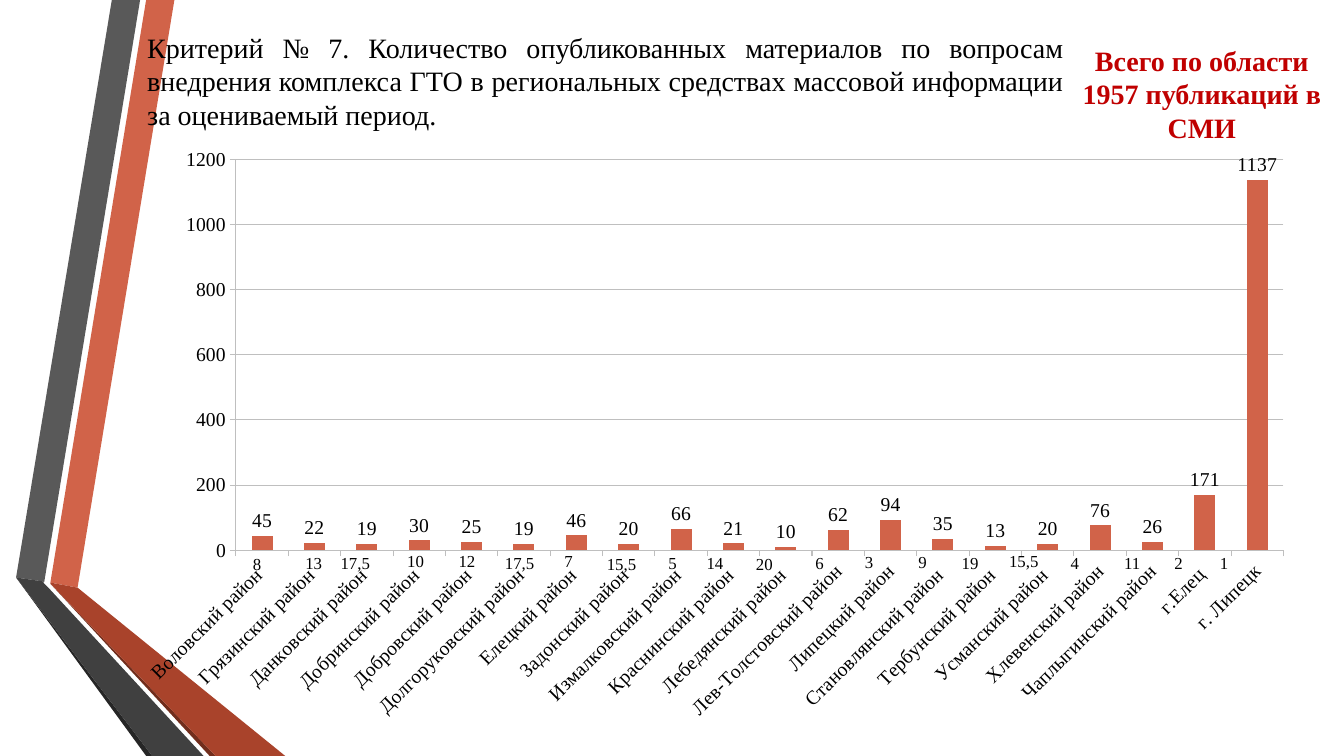
from typing import NamedTuple

from lxml.etree import SubElement
from pptx import Presentation
from pptx.chart.data import CategoryChartData
from pptx.dml.color import RGBColor
from pptx.enum.chart import XL_CHART_TYPE as ChartType
from pptx.enum.chart import XL_LABEL_POSITION as LabelPosition
from pptx.enum.chart import XL_TICK_MARK as TickMark
from pptx.enum.text import MSO_ANCHOR as Anchor
from pptx.enum.text import MSO_AUTO_SIZE as AutoSize
from pptx.enum.text import PP_ALIGN as Align
from pptx.oxml.ns import qn
from pptx.util import Inches, Pt


class Theme(NamedTuple):
    font: str = "Times New Roman"
    text: str = "000000"
    total: str = "C00000"
    bar: str = "D16349"
    grid: str = "BFBFBF"
    heading_size: int = 20
    chart_size: int = 14
    rank_size: int = 12


class Frame(NamedTuple):
    left: float
    top: float
    width: float
    height: float


class Ribbon(NamedTuple):
    color: str
    points: list[tuple[float, float]]


class District(NamedTuple):
    name: str
    publications: int
    rank: str
    rank_left: float
    rank_top: float
    rank_width: float


THEME = Theme()
CHART = Frame(1.21, 1.36, 11.75, 5.9)
PLOT = Frame(2.34, 1.58, 10.39, 3.88)

RIBBONS = [
    Ribbon(THEME.bar, [(0.5, 5.78), (0.77, 5.83), (1.73, 0), (1.45, 0)]),
    Ribbon("595959", [(1.39, 0), (1.11, 0), (0.16, 5.73), (0.44, 5.77)]),
    Ribbon("262626", [(0.16, 5.73), (1.45, 7.5), (1.51, 7.5)]),
    Ribbon("712D1C", [(0.5, 5.79), (2.08, 7.5), (2.14, 7.5)]),
    Ribbon("A9432B", [(0.5, 5.79), (2.14, 7.5), (2.83, 7.5), (0.77, 5.83), (0.5, 5.78)]),
    Ribbon("404040", [(2.02, 7.5), (0.48, 5.83), (0.43, 5.78), (0.44, 5.77),
                      (0.16, 5.73), (1.51, 7.5)]),
]

DISTRICTS = [
    District("Воловский район ", 45, "8", 2.41, 5.44, 0.6),
    District("Грязинский район ", 22, "13", 2.93, 5.43, 0.58),
    District("Данковский район ", 19, "17,5", 3.28, 5.43, 0.66),
    District("Добринский район ", 30, "10", 3.94, 5.41, 0.63),
    District("Добровский район ", 25, "12", 4.45, 5.41, 0.6),
    District("Долгоруковский район ", 19, "17,5", 4.91, 5.43, 0.53),
    District("Елецкий район ", 46, "7", 5.5, 5.41, 0.56),
    District("Задонский район ", 20, "15,5", 5.92, 5.44, 0.52),
    District("Измалковский район ", 66, "5", 6.53, 5.43, 0.45),
    District("Краснинский район ", 21, "14", 6.91, 5.43, 0.68),
    District("Лебедянский район ", 10, "20", 7.4, 5.44, 0.73),
    District("Лев-Толстовский район", 62, "6", 7.99, 5.43, 0.54),
    District("Липецкий район", 94, "3", 8.48, 5.42, 0.41),
    District("Становлянский район ", 35, "9", 9.01, 5.42, 0.34),
    District("Тербунский район ", 13, "19", 9.44, 5.43, 0.43),
    District("Усманский район ", 20, "15,5", 9.91, 5.41, 0.57),
    District("Хлевенский район", 76, "4", 10.52, 5.43, 0.42),
    District("Чаплыгинский район", 26, "11", 11.05, 5.43, 0.78),
    District("г.Елец ", 171, "2", 11.55, 5.43, 0.45),
    District("г. Липецк", 1137, "1", 12, 5.43, 0.45),
]


def style_font(font, size: int, color: str = THEME.text, bold: bool = False) -> None:
    font.name = THEME.font
    font.size = Pt(size)
    font.bold = bold
    font.color.rgb = RGBColor.from_string(color)


def write(box, text: str, size: int, align: Align, color: str = THEME.text,
          bold: bool = False, auto_size: AutoSize = AutoSize.NONE) -> None:
    frame = box.text_frame
    frame.word_wrap = True
    frame.auto_size = auto_size
    frame.vertical_anchor = Anchor.TOP
    frame.margin_left = frame.margin_right = Inches(0.1)
    frame.margin_top = frame.margin_bottom = Inches(0.05)
    para = frame.paragraphs[0]
    para.alignment = align
    para.line_spacing = 1.0
    para.space_before = Pt(0)
    span = para.add_run()
    span.text = text
    style_font(span.font, size, color, bold)


def draw_ribbon(page, ribbon: Ribbon) -> None:
    points = [(Inches(x), Inches(y)) for x, y in ribbon.points]
    builder = page.shapes.build_freeform(*points[0])
    builder.add_line_segments(points[1:], close=True)
    shape = builder.convert_to_shape()
    shape.shadow.inherit = False
    shape.fill.solid()
    shape.fill.fore_color.rgb = RGBColor.from_string(ribbon.color)
    shape.line.fill.background()


def place_plot(chart) -> None:
    """Fix the inner plot area as fractions of the chart frame."""
    plot_area = chart._chartSpace.chart.plotArea
    for old_layout in plot_area.findall(qn("c:layout")):
        plot_area.remove(old_layout)
    layout = SubElement(plot_area, qn("c:layout"))
    plot_area.insert(0, layout)
    manual = SubElement(layout, qn("c:manualLayout"))
    settings = {
        "layoutTarget": "inner", "xMode": "edge", "yMode": "edge",
        "x": (PLOT.left - CHART.left) / CHART.width,
        "y": (PLOT.top - CHART.top) / CHART.height,
        "w": PLOT.width / CHART.width,
        "h": PLOT.height / CHART.height,
    }
    for tag, value in settings.items():
        SubElement(manual, qn(f"c:{tag}")).set("val", str(value))


def draw_chart(page) -> None:
    data = CategoryChartData(number_format="0")
    data.categories = [district.name for district in DISTRICTS]
    data.add_series("Series 1", [district.publications for district in DISTRICTS])
    chart = page.shapes.add_chart(ChartType.COLUMN_CLUSTERED, *map(Inches, CHART), data).chart
    chart.has_legend = False
    chart.has_title = False
    style_font(chart.font, THEME.chart_size)
    grid_color = RGBColor.from_string(THEME.grid)

    # Axes
    names, values = chart.category_axis, chart.value_axis
    for axis in (names, values):
        axis.major_tick_mark = TickMark.OUTSIDE
        axis.minor_tick_mark = TickMark.NONE
        axis.format.line.color.rgb = grid_color
        style_font(axis.tick_labels.font, THEME.chart_size)
    names._element.find(qn("c:txPr")).find(qn("a:bodyPr")).set("rot", "-2700000")
    values.minimum_scale, values.maximum_scale, values.major_unit = 0, 1200, 200
    values.has_major_gridlines = True
    values.major_gridlines.format.line.color.rgb = grid_color
    values.tick_labels.number_format = "0"
    values.tick_labels.number_format_is_linked = False

    # Columns and their values
    plot = chart.plots[0]
    plot.gap_width = 150
    plot.vary_by_categories = False
    fill = plot.series[0].format.fill
    fill.solid()
    fill.fore_color.rgb = RGBColor.from_string(THEME.bar)
    plot.has_data_labels = True
    labels = plot.data_labels
    labels.show_value = True
    labels.number_format = "0"
    labels.number_format_is_linked = False
    labels.position = LabelPosition.OUTSIDE_END
    style_font(labels.font, THEME.chart_size)
    place_plot(chart)


def main() -> None:
    deck = Presentation()
    deck.slide_width, deck.slide_height = Inches(13.33), Inches(7.5)
    page = deck.slides.add_slide(deck.slide_layouts[5])

    for ribbon in RIBBONS:
        draw_ribbon(page, ribbon)
    draw_chart(page)

    # Heading, brought in front of the ribbons
    title = page.shapes.title
    title.left, title.top, title.width, title.height = map(Inches, (1.36, 0.25, 9.29, 1.11))
    write(title, "Критерий № 7. Количество опубликованных материалов по вопросам внедрения "
          "комплекса ГТО в региональных средствах массовой информации за оцениваемый период.",
          THEME.heading_size, Align.JUSTIFY, auto_size=AutoSize.SHAPE_TO_FIT_TEXT)
    page.shapes._spTree.append(title._element)

    # Regional total
    total = page.shapes.add_textbox(*map(Inches, (10.48, 0.38, 2.88, 1.11)))
    write(total, "Всего по области 1957 публикаций в СМИ", THEME.heading_size, Align.CENTER,
          THEME.total, bold=True, auto_size=AutoSize.SHAPE_TO_FIT_TEXT)

    # Rank under each column
    for district in DISTRICTS:
        frame = Frame(district.rank_left, district.rank_top, district.rank_width, 0.43)
        box = page.shapes.add_textbox(*map(Inches, frame))
        write(box, district.rank, THEME.rank_size, Align.LEFT)

    deck.save("out.pptx")


if __name__ == "__main__":
    main()
